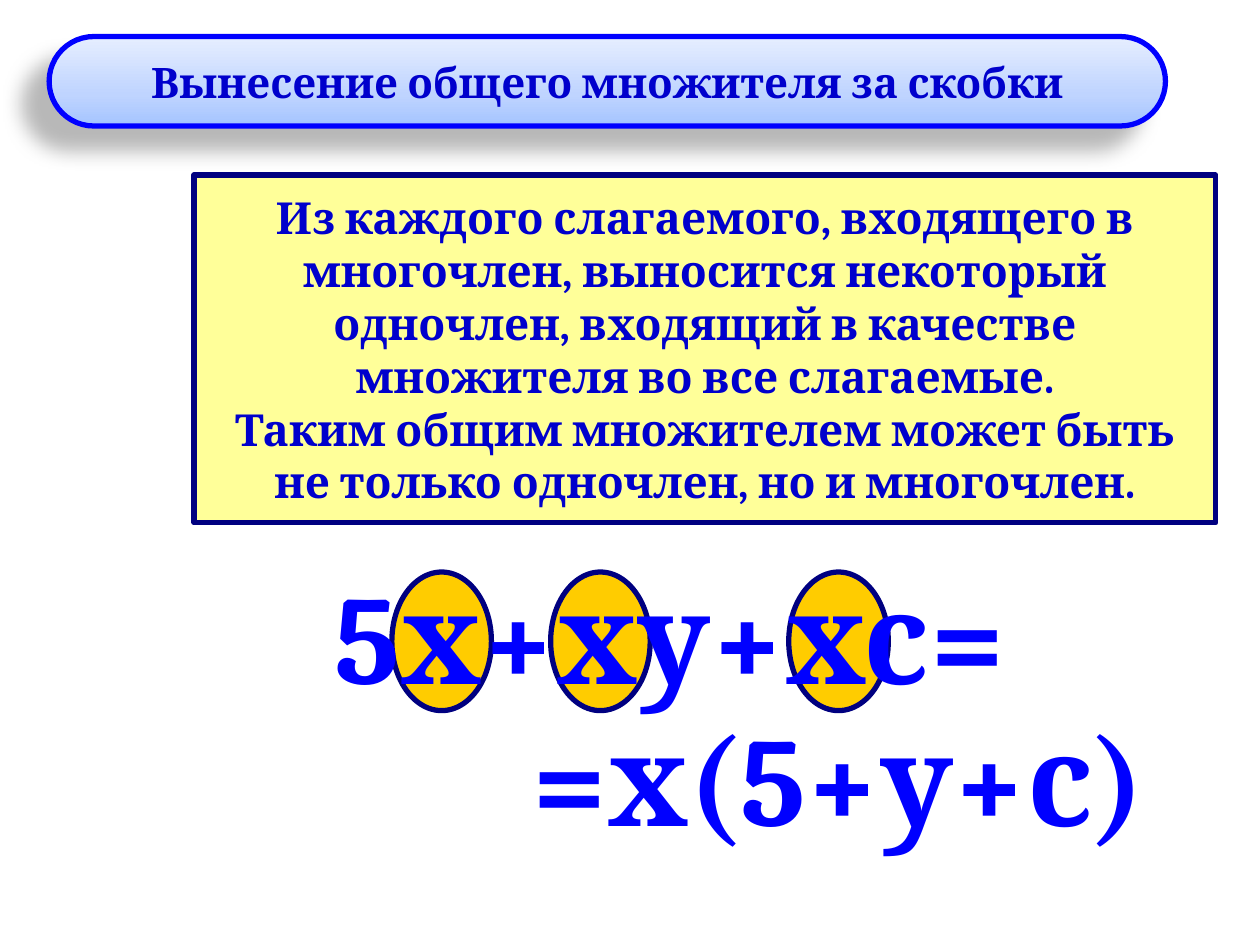
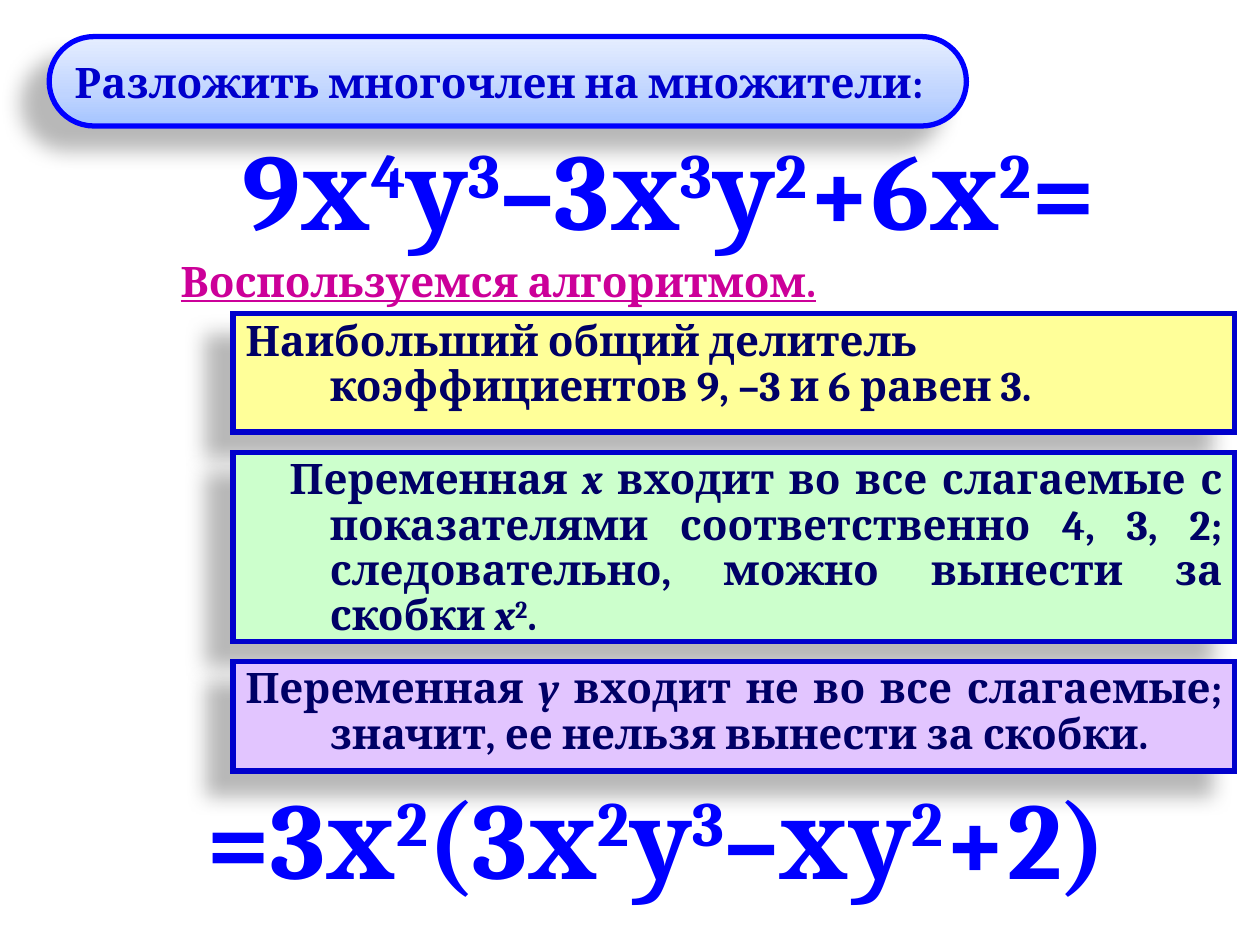
from lxml import etree
from pptx import Presentation
from pptx.dml.color import RGBColor
from pptx.enum.shapes import MSO_SHAPE
from pptx.enum.text import MSO_ANCHOR, MSO_AUTO_SIZE, PP_ALIGN
from pptx.oxml.ns import qn
from pptx.util import Inches, Pt

LEFT, CENTER, JUSTIFY = PP_ALIGN.LEFT, PP_ALIGN.CENTER, PP_ALIGN.JUSTIFY
TOP, MIDDLE = MSO_ANCHOR.TOP, MSO_ANCHOR.MIDDLE
RECTANGLE, OVAL, ROUNDED = MSO_SHAPE.RECTANGLE, MSO_SHAPE.OVAL, MSO_SHAPE.ROUNDED_RECTANGLE

FONT = "Cambria"
BLUE, TITLE_BLUE, NAVY, DARK_TEXT = "0000FF", "0000CC", "000080", "000066"
YELLOW, GREEN, LILAC, ORANGE, MAGENTA = "FFFF99", "CCFFCC", "E2C5FF", "FFCC00", "CC0099"
BAND_GRADIENT = [(0, "A4C4FF"), (35, "BFD4FF"), (100, "E6EEFF")]

# In the texts, ^ raises the next character and _ makes it italic.
FACTORING = {
    "title": "Вынесение общего множителя за скобки",
    "title_width": 8.86,
    "rule": "Из каждого слагаемого, входящего в многочлен, выносится некоторый одночлен, "
            "входящий в качестве множителя во все слагаемые.\n"
            "Таким общим множителем может быть не только одночлен, но и многочлен.",
    "factor_lefts": [6.26, 4.37, 3.11],
    "formulas": [("5х+ху+хс=", (2.56, 4.38, 5.82, 1.31)),
                 ("=х(5+у+с)", (4.13, 5.51, 5.54, 1.31))],
}
EXAMPLE = {
    "title": "Разложить многочлен на множители:",
    "title_width": 7.28,
    "formulas": [("9х^4у^3–3х^3у^2+6х^2=", (1.83, 0.92, 8.05, 1.14)),
                 ("=3х^2(3х^2у^3–ху^2+2)", (1.54, 6.07, 8.41, 1.14))],
    "hint": "Воспользуемся алгоритмом.",
    # text, fill, height, alignment, first-line indent
    "steps": [
        ("Наибольший общий делитель коэффициентов 9, –3 и 6 равен 3.",
         YELLOW, 0.94, LEFT, -0.67),
        ("Переменная _x входит во все слагаемые с показателями соответственно 4, 3, 2; "
         "следовательно, можно вынести за скобки _x^2.", GREEN, 1.5, JUSTIFY, -0.32),
        ("Переменная _y входит не во все слагаемые; значит, ее нельзя вынести за скобки.",
         LILAC, 0.87, JUSTIFY, -0.67),
    ],
}
STEP_LEFT, STEP_TOP, STEP_WIDTH, STEP_GAP, STEP_INDENT = 1.85, 2.49, 7.95, 0.16, 0.67


def color(hex_value):
    return RGBColor.from_string(hex_value)


def split_marks(text):
    """Yield (piece, mark) pairs, where mark is "", "^" or "_"."""
    piece, mark = "", ""
    for character in text:
        if character in "^_":
            if piece:
                yield piece, ""
            piece, mark = "", character
        elif mark:
            yield character, mark
            mark = ""
        else:
            piece += character
    if piece:
        yield piece, ""


def write(shape, text, size=24, fill=TITLE_BLUE, align=LEFT, anchor=TOP, wrap=True,
          underline=False, line_spacing=None, margin=0, indent=0):
    frame = shape.text_frame
    frame.word_wrap = wrap
    frame.vertical_anchor = anchor
    frame.auto_size = MSO_AUTO_SIZE.NONE if wrap else MSO_AUTO_SIZE.SHAPE_TO_FIT_TEXT
    paragraph = frame.paragraphs[0]
    paragraph.alignment = align
    if line_spacing:
        paragraph.line_spacing = line_spacing
    if margin:
        properties = paragraph._p.get_or_add_pPr()
        properties.set("marL", str(Inches(margin)))
        properties.set("indent", str(Inches(indent)))
    for number, line in enumerate(text.split("\n")):
        if number:
            paragraph.add_line_break()
        for piece, mark in split_marks(line):
            run = paragraph.add_run()
            run.text = piece
            font = run.font
            font.name, font.size, font.bold = FONT, Pt(size), True
            font.color.rgb = color(fill)
            if underline:
                font.underline = True
            if mark == "_":
                font.italic = True
            elif mark == "^":
                font._element.set("baseline", "30000")


def add_color(parent, hex_value):
    return etree.SubElement(parent, qn("a:srgbClr"), val=hex_value)


def add_shadow(shape):
    effects = shape._element.spPr.find(qn("a:effectLst"))
    shadow = etree.SubElement(effects, qn("a:outerShdw"), blurRad=str(Pt(11.8)),
                              dist=str(Pt(19.7)), dir=str(141 * 60000),
                              algn="ctr", rotWithShape="0")
    etree.SubElement(add_color(shadow, "000000"), qn("a:alpha"), val="28000")


def add_box(slide, kind, bounds, fill, line):
    shape = slide.shapes.add_shape(kind, *map(Inches, bounds))
    shape.shadow.inherit = False
    shape.fill.solid()
    shape.fill.fore_color.rgb = color(fill)
    shape.line.color.rgb = color(line)
    shape.line.width = Pt(3)
    return shape


def add_text(slide, text, bounds, **text_format):
    write(slide.shapes.add_textbox(*map(Inches, bounds)), text, **text_format)


def add_title_band(slide, text, width, align):
    band = add_box(slide, ROUNDED, (0.39, 0.29, width, 0.71), BAND_GRADIENT[0][1], BLUE)
    band.adjustments[0] = 0.5
    band.fill.gradient()
    band.fill.gradient_angle = 90
    stops = band._element.spPr.find(qn("a:gradFill")).find(qn("a:gsLst"))
    for stop in list(stops):
        stops.remove(stop)
    for percent, hex_value in BAND_GRADIENT:
        add_color(etree.SubElement(stops, qn("a:gs"), pos=str(percent * 1000)), hex_value)
    add_shadow(band)
    write(band, text, align=align, anchor=MIDDLE)


def add_formulas(slide, formulas, size):
    for text, bounds in formulas:
        add_text(slide, text, bounds, size=size, fill=BLUE, wrap=False)


def build_factoring(slide):
    for left in FACTORING["factor_lefts"]:
        add_box(slide, OVAL, (left, 4.54, 0.79, 1.1), ORANGE, NAVY)
    rule = add_box(slide, RECTANGLE, (1.54, 1.39, 8.11, 2.76), YELLOW, NAVY)
    write(rule, FACTORING["rule"], size=25.2, align=CENTER, anchor=MIDDLE)
    add_formulas(slide, FACTORING["formulas"], 72)
    add_title_band(slide, FACTORING["title"], FACTORING["title_width"], CENTER)


def build_example(slide):
    add_text(slide, EXAMPLE["hint"], (1.22, 2.02, 5.47, 0.55), fill=MAGENTA,
             align=CENTER, underline=True, line_spacing=0.9)
    top = STEP_TOP
    for text, fill, height, align, indent in EXAMPLE["steps"]:
        step = add_box(slide, RECTANGLE, (STEP_LEFT, top, STEP_WIDTH, height), fill, TITLE_BLUE)
        etree.SubElement(step._element.spPr.find(qn("a:ln")), qn("a:miter"), lim="800000")
        add_shadow(step)
        write(step, text, fill=DARK_TEXT, align=align, line_spacing=0.9,
              margin=STEP_INDENT, indent=indent)
        top += height + STEP_GAP
    add_formulas(slide, EXAMPLE["formulas"], 62)
    add_title_band(slide, EXAMPLE["title"], EXAMPLE["title_width"], LEFT)


def main():
    presentation = Presentation()
    presentation.slide_width, presentation.slide_height = Inches(10), Inches(7.5)
    blank = presentation.slide_layouts[6]
    for build in (build_factoring, build_example):
        build(presentation.slides.add_slide(blank))
    presentation.save("out.pptx")


if __name__ == "__main__":
    main()
